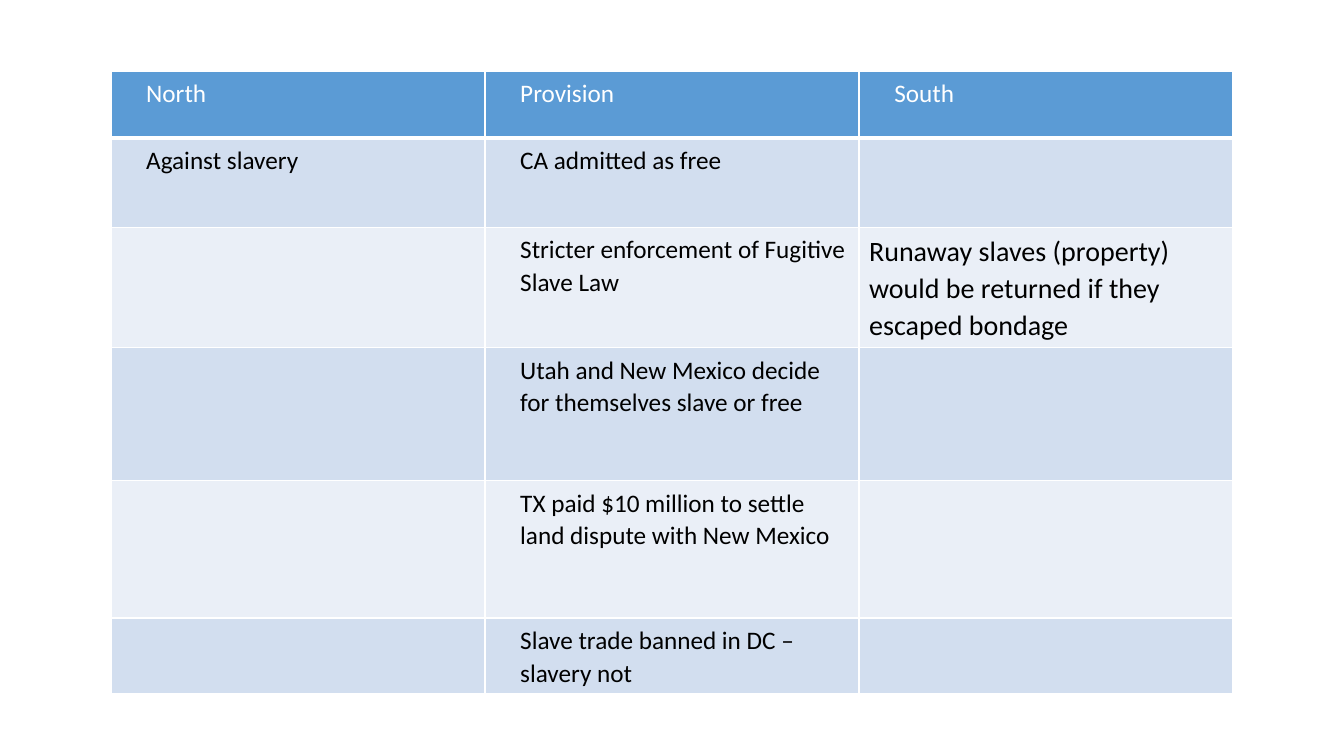
from lxml import etree
from pptx import Presentation
from pptx.dml.color import RGBColor
from pptx.oxml.ns import qn
from pptx.util import Inches, Pt

WHITE = RGBColor(0xFF, 0xFF, 0xFF)
BLACK = RGBColor(0x00, 0x00, 0x00)
HEADER_BLUE = RGBColor(0x5B, 0x9B, 0xD5)
BAND_DARK = RGBColor(0xD2, 0xDE, 0xEF)
BAND_LIGHT = RGBColor(0xEA, 0xEF, 0xF7)

COLUMN_WIDTH = 3.71
ROW_HEIGHTS = [0.66, 0.89, 1.17, 1.32, 1.36, 0.7]
ROWS = [
    ["North", "Provision", "South"],
    ["Against slavery", "CA admitted as free", ""],
    ["", "Stricter enforcement of Fugitive Slave Law",
     "Runaway slaves (property) would be returned if they escaped bondage"],
    ["", "Utah and New Mexico decide for themselves slave or free", ""],
    ["", "TX paid $10 million to settle land dispute with New Mexico", ""],
    ["", "Slave trade banned in DC – slavery not", ""],
]
RETURN_CELL = (2, 2)  # the larger, unindented note on runaway slaves

HEADER_FONT = {"name": "Calibri", "size": Pt(18), "bold": False}
RETURN_FONT = {**HEADER_FONT, "size": Pt(20)}


def set_borders(cell, bottom_width):
    """Draw white cell edges; they must come before the fill in the XML."""
    properties = cell._tc.get_or_add_tcPr()
    widths = {"a:lnL": 1, "a:lnR": 1, "a:lnT": 1, "a:lnB": bottom_width}
    for index, (tag, width) in enumerate(widths.items()):
        line = etree.Element(qn(tag), w=str(Pt(width)))
        fill = etree.SubElement(line, qn("a:solidFill"))
        etree.SubElement(fill, qn("a:srgbClr"), val=str(WHITE))
        properties.insert(index, line)


def write_cell(cell, text, color, is_return):
    para = cell.text_frame.paragraphs[0]
    para.line_spacing = 1.07
    if not is_return:
        para.space_after = Pt(8)
        para._p.get_or_add_pPr().set("marL", str(Inches(0.25)))
    span = para.add_run()
    span.text = text
    for name, value in (RETURN_FONT if is_return else HEADER_FONT).items():
        setattr(span.font, name, value)
    span.font.color.rgb = color


def add_provisions_table(page):
    frame = page.shapes.add_table(
        len(ROWS), len(ROWS[0]), Inches(1.1), Inches(0.71),
        Inches(COLUMN_WIDTH * len(ROWS[0])), Inches(sum(ROW_HEIGHTS)))
    table = frame.table
    for column in table.columns:
        column.width = Inches(COLUMN_WIDTH)
    for row_index, (texts, height) in enumerate(zip(ROWS, ROW_HEIGHTS)):
        table.rows[row_index].height = Inches(height)
        is_header = row_index == 0
        band = BAND_DARK if row_index % 2 else BAND_LIGHT
        for column_index, text in enumerate(texts):
            cell = table.cell(row_index, column_index)
            cell.fill.solid()
            cell.fill.fore_color.rgb = HEADER_BLUE if is_header else band
            set_borders(cell, 3 if is_header else 1)
            if text:
                write_cell(cell, text, WHITE if is_header else BLACK,
                           (row_index, column_index) == RETURN_CELL)


def main():
    deck = Presentation()
    deck.slide_width = Inches(13.33)
    deck.slide_height = Inches(7.5)
    page = deck.slides.add_slide(deck.slide_layouts[6])
    # Compromise provisions by side
    add_provisions_table(page)
    deck.save("out.pptx")


if __name__ == "__main__":
    main()
